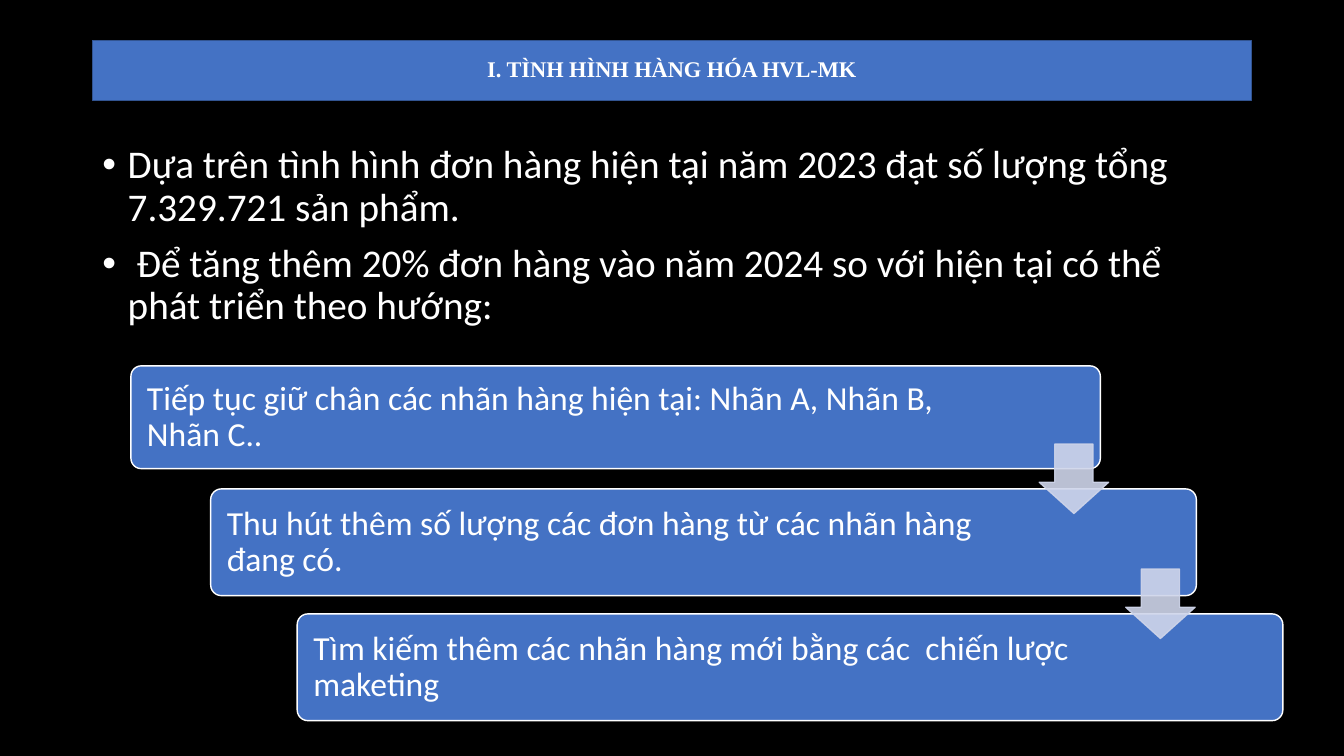
from lxml import etree
from pptx import Presentation
from pptx.dml.color import RGBColor
from pptx.enum.shapes import MSO_SHAPE as Kind
from pptx.enum.text import MSO_ANCHOR as Anchor, PP_ALIGN as Align
from pptx.oxml.ns import qn
from pptx.util import Cm, Pt

BLACK = RGBColor(0x00, 0x00, 0x00)
WHITE = RGBColor(0xFF, 0xFF, 0xFF)
BLUE = RGBColor(0x44, 0x72, 0xC4)
NAVY = RGBColor(0x32, 0x54, 0x91)
PALE = RGBColor(0xCF, 0xD5, 0xEA)

TITLE = "I. TÌNH HÌNH HÀNG HÓA HVL-MK"
POINTS = [
    "Dựa trên tình hình đơn hàng hiện tại năm 2023 đạt số lượng tổng 7.329.721 sản phẩm.",
    " Để tăng thêm 20% đơn hàng vào năm 2024 so với hiện tại có thể phát triển theo hướng:",
]
STEPS = [
    ((3.3, 9.22, 24.43, 2.59), 3.05,
     "Tiếp tục giữ chân các nhãn hàng hiện tại: Nhãn A, Nhãn B, Nhãn C.."),
    ((5.31, 12.32, 24.84, 2.69), 4.3,
     "Thu hút thêm số lượng các đơn hàng từ các nhãn hàng đang có."),
    ((7.49, 15.47, 24.84, 2.69), 4.3,
     "Tìm kiếm thêm các nhãn hàng mới bằng các  chiến lược maketing"),
]


def place(box):
    return [Cm(n) for n in box]


def style(par, size, face="Calibri", bold=False):
    par.line_spacing = 0.9
    font = par.font
    font.size, font.name, font.bold = Pt(size), face, bold
    font.color.rgb = WHITE


def add_form(slide, kind, box, fill, line):
    form = slide.shapes.add_shape(kind, *place(box))
    form.shadow.inherit = False
    form.fill.solid()
    form.fill.fore_color.rgb = fill
    form.line.color.rgb = line
    form.line.width = Pt(1)
    return form


def add_title(slide, box):
    form = add_form(slide, Kind.RECTANGLE, box, BLUE, NAVY)
    frame = form.text_frame
    frame.vertical_anchor = Anchor.MIDDLE
    frame.text = TITLE
    par = frame.paragraphs[0]
    par.alignment = Align.CENTER
    style(par, 16, "Times New Roman", True)


def add_points(slide, box):
    frame = slide.shapes.add_textbox(*place(box)).text_frame
    frame.word_wrap = True
    for i, text in enumerate(POINTS):
        par = frame.paragraphs[0] if i == 0 else frame.add_paragraph()
        par.text = text
        style(par, 28)
        par.space_before = Pt(10)
        props = par._p.get_or_add_pPr()
        props.set("marL", str(Cm(0.64)))
        props.set("indent", str(-Cm(0.64)))
        face = etree.Element(qn("a:buFont"), typeface="Arial")
        mark = etree.Element(qn("a:buChar"), char="•")
        spot = props.index(props.find(qn("a:spcBef"))) + 1
        props[spot:spot] = [face, mark]


def add_step(slide, box, right, text):
    form = add_form(slide, Kind.ROUNDED_RECTANGLE, box, BLUE, WHITE)
    form.adjustments[0] = 0.1
    frame = form.text_frame
    frame.word_wrap = True
    frame.vertical_anchor = Anchor.MIDDLE
    frame.margin_left, frame.margin_right = Cm(0.33), Cm(right)
    frame.text = text
    par = frame.paragraphs[0]
    par.alignment = Align.LEFT
    style(par, 24)


def add_arrow(slide, box):
    left, top = box[:2]
    spot = (left + 20.88, top - 1.13, 1.75, 1.75)
    form = add_form(slide, Kind.DOWN_ARROW, spot, PALE, PALE)
    form.adjustments[0], form.adjustments[1] = 0.55, 0.45
    for tint in form._element.spPr.iter(qn("a:srgbClr")):
        etree.SubElement(tint, qn("a:alpha"), val="90000")


def main():
    deck = Presentation()
    deck.slide_width, deck.slide_height = Cm(33.87), Cm(19.05)
    slide = deck.slides.add_slide(deck.slide_layouts[6])
    slide.background.fill.solid()
    slide.background.fill.fore_color.rgb = BLACK
    add_points(slide, (2.33, 3.53, 29.21, 15.52))
    add_title(slide, (2.33, 1.02, 29.21, 1.52))
    for step in STEPS:
        add_step(slide, *step)
    for box, _, _ in STEPS[1:]:
        add_arrow(slide, box)
    deck.save("out.pptx")


if __name__ == "__main__":
    main()
